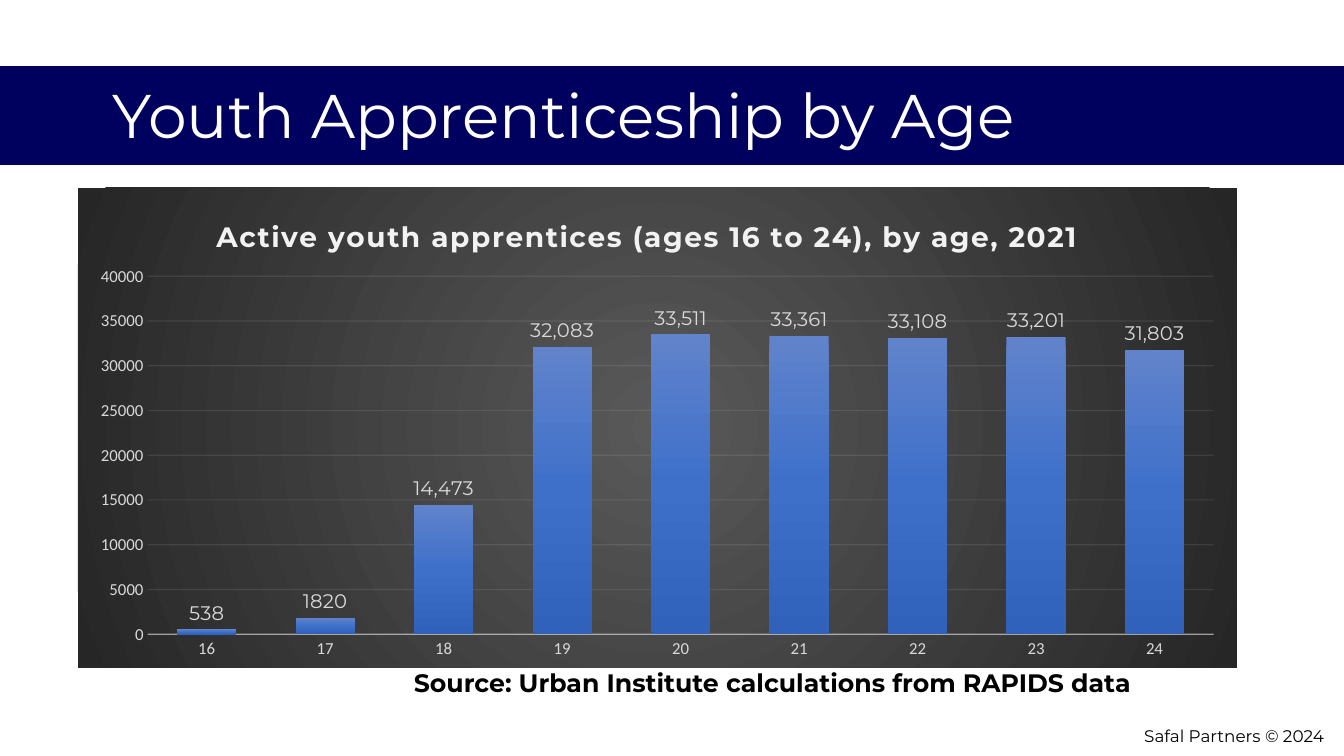
"""Build the slide on youth apprenticeship by age."""
from lxml import etree
from pptx import Presentation
from pptx.chart.data import CategoryChartData
from pptx.dml.color import RGBColor
from pptx.enum.chart import XL_CHART_TYPE as ChartType, XL_LABEL_POSITION as LabelPosition
from pptx.enum.chart import XL_TICK_MARK as TickMark
from pptx.enum.shapes import MSO_SHAPE as Shape
from pptx.enum.text import MSO_ANCHOR as Anchor, PP_ALIGN as Align
from pptx.oxml import parse_xml
from pptx.oxml.ns import nsdecls, qn
from pptx.util import Pt

PX = 9071
FONT = "Montserrat"
PALE, GREY = "F2F2F2", "D9D9D9"
rgb = RGBColor.from_string


def add_text(text, left, top, width, height, size, color="000000", bold=False,
             align=Align.LEFT, anchor=Anchor.MIDDLE, spacing=1.0):
    box = slide.shapes.add_textbox(left * PX, top * PX, width * PX, height * PX)
    frame = box.text_frame
    frame.word_wrap = True
    frame.vertical_anchor = anchor
    line = frame.paragraphs[0]
    line.alignment, line.line_spacing = align, spacing
    run = line.add_run()
    run.text = text
    run.font.name, run.font.size, run.font.bold = FONT, Pt(size), bold
    run.font.color.rgb = rgb(color)


def gradient_properties(stops, direction):
    stop_xml = "".join(f'<a:gs pos="{percent * 1000}"><a:srgbClr val="{color}"/></a:gs>'
                       for percent, color in stops)
    return parse_xml(f'<c:spPr {nsdecls("c", "a")}><a:gradFill><a:gsLst>{stop_xml}</a:gsLst>'
                     f'{direction}</a:gradFill><a:ln><a:noFill/></a:ln></c:spPr>')


deck = Presentation()
deck.slide_width, deck.slide_height = 1344 * PX, 756 * PX
slide = deck.slides.add_slide(deck.slide_layouts[6])

banner = slide.shapes.add_shape(Shape.RECTANGLE, 0, 66 * PX, 1344 * PX, 99 * PX)
banner.shadow.inherit = False
banner.fill.solid()
banner.fill.fore_color.rgb = rgb("00015E")
banner.line.fill.background()

add_text("Youth Apprenticeship by Age", 103, 46, 1241, 146, 44, "FFFFFF", spacing=0.9)
add_text("Safal Partners © 2024", 968, 716, 366, 40, 12, align=Align.RIGHT)

ages = CategoryChartData()
ages.categories = [str(age) for age in range(16, 25)]
ages.add_series("Series 1", [538, 1820, 14473, 32083, 33511, 33361, 33108, 33201, 31803])
chart = slide.shapes.add_chart(ChartType.COLUMN_CLUSTERED, 78 * PX, 188 * PX,
                               1159 * PX, 480 * PX, ages).chart
chart.has_legend = False
chart.font.name, chart.font.size = "Calibri", Pt(10)
chart._chartSpace.chart.addnext(gradient_properties(
    [(0, "595959"), (100, "262626")],
    '<a:path path="circle"><a:fillToRect l="50000" t="50000" r="50000" b="50000"/></a:path>'))

chart.has_title = True
heading = chart.chart_title.text_frame.paragraphs[0].add_run()
heading.text = "Active youth apprentices (ages 16 to 24), by age, 2021"
heading.font.name, heading.font.size, heading.font.bold = FONT, Pt(20), True
heading.font.color.rgb = rgb(PALE)
heading.font._element.set("spc", "100")
chart.chart_title.include_in_layout = False

age_axis, count_axis = chart.category_axis, chart.value_axis
for axis in (age_axis, count_axis):
    axis.major_tick_mark = axis.minor_tick_mark = TickMark.NONE
    axis.tick_labels.font.name, axis.tick_labels.font.size = "Calibri", Pt(12)
    axis.tick_labels.font.color.rgb = rgb(GREY)
count_axis.minimum_scale, count_axis.maximum_scale, count_axis.major_unit = 0, 40000, 5000
count_axis.tick_labels.number_format = "0"
count_axis.tick_labels.number_format_is_linked = False
count_axis.format.line.fill.background()

for line, width, opacity in ((age_axis.format.line, 1, 54),
                             (count_axis.major_gridlines.format.line, 0.75, 10)):
    line.width = Pt(width)
    line.color.rgb = rgb(PALE)
    line_color = line._ln.find(".//" + qn("a:srgbClr"))
    etree.SubElement(line_color, qn("a:alpha")).set("val", str(opacity * 1000))

plot = chart.plots[0]
plot.gap_width, plot.overlap, plot.vary_by_categories = 100, -24, False
apprentices = plot.series[0]
apprentices.invert_if_negative = False
apprentices._element.find(qn("c:tx")).addnext(gradient_properties(
    [(0, "6183CB"), (50, "3E70CA"), (100, "3062BB")], '<a:lin ang="5400000" scaled="0"/>'))

counts = apprentices.data_labels
counts.show_value = True
counts.number_format, counts.number_format_is_linked = "#,##0", False
counts.position = LabelPosition.OUTSIDE_END
age_17 = apprentices.points[1].data_label
age_17_run = age_17.text_frame.paragraphs[0].add_run()
age_17_run.text = "1820"
age_17.position = LabelPosition.OUTSIDE_END
for font in (counts.font, age_17_run.font):
    font.name, font.size = FONT, Pt(14)
    font.color.rgb = rgb(GREY)

plot_area = chart._chartSpace.chart.plotArea
for old_layout in plot_area.findall(qn("c:layout")):
    plot_area.remove(old_layout)
plot_area.insert(0, parse_xml(
    f'<c:layout {nsdecls("c")}><c:manualLayout><c:layoutTarget val="inner"/>'
    '<c:xMode val="edge"/><c:yMode val="edge"/><c:x val="0.06"/><c:y val="0.184"/>'
    '<c:w val="0.92"/><c:h val="0.746"/></c:manualLayout></c:layout>'))
title_element = chart.chart_title._element
for old_layout in title_element.findall(qn("c:layout")):
    title_element.remove(old_layout)
title_element.find(qn("c:tx")).addnext(parse_xml(
    f'<c:layout {nsdecls("c")}><c:manualLayout><c:xMode val="edge"/><c:yMode val="edge"/>'
    '<c:x val="0.115"/><c:y val="0.05"/></c:manualLayout></c:layout>'))

add_text("Source: Urban Institute calculations from RAPIDS data", 404, 666, 743, 40, 18,
         bold=True, anchor=Anchor.TOP, spacing=0.9)

deck.save("out.pptx")
